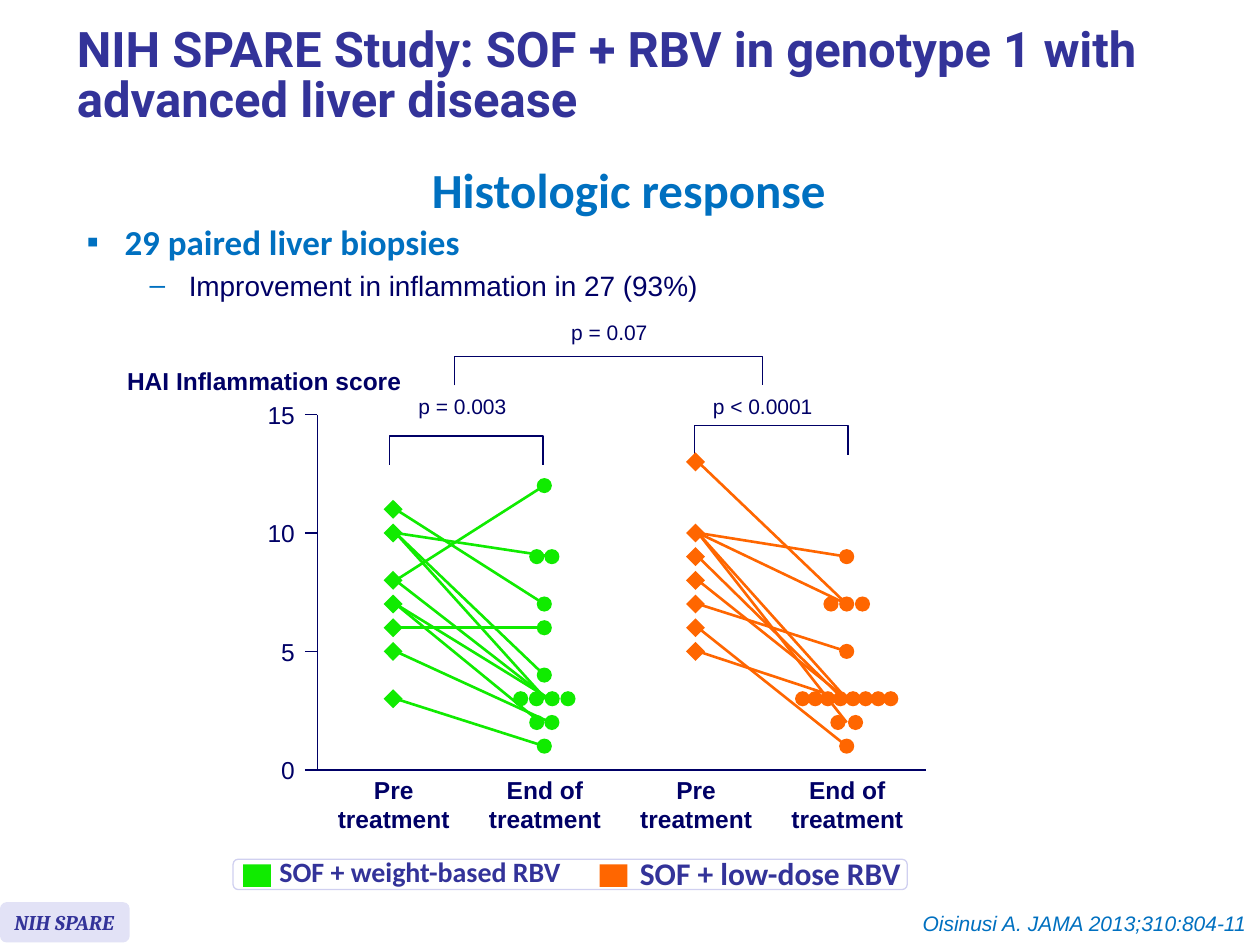
from lxml.etree import SubElement
from pptx import Presentation
from pptx.dml.color import RGBColor
from pptx.enum.shapes import MSO_CONNECTOR, MSO_SHAPE
from pptx.enum.text import MSO_ANCHOR, MSO_AUTO_SIZE, PP_ALIGN
from pptx.oxml.ns import qn
from pptx.util import Inches, Pt

WHITE = RGBColor(0xFF, 0xFF, 0xFF)
INDIGO = RGBColor(0x33, 0x33, 0x99)
NAVY = RGBColor(0x00, 0x00, 0x66)
BLUE = RGBColor(0x00, 0x70, 0xC0)
LAVENDER = RGBColor(0xE2, 0xE2, 0xF6)
PALE = RGBColor(0xD0, 0xD0, 0xF0)
GREEN = RGBColor(0x10, 0xEB, 0x00)
ORANGE = RGBColor(0xFF, 0x66, 0x00)

# Chart grid: four columns and a score scale, in inches
FIRST_COLUMN, COLUMN_STEP = 3.12, 1.2
BASELINE, SCORE_STEP = 6.11, 0.188
AXIS_X, AXIS_END, TICK = 2.52, 7.35, 0.1
DIAMOND, DOT = 0.15, 0.12

# Each group: colour, first column, (pre, end, shift of line end),
# and end-of-treatment dots as score: (count, gap)
GROUPS = [
    (GREEN, 0,
     [(8, 12, 0), (11, 7, 0), (10, 9, 0.06), (10, 4, 0), (10, 3, 0.01),
      (8, 3, 0.03), (7, 3, 0.04), (7, 2, -0.03), (5, 2, 0.05), (3, 1, 0),
      (6, 6, 0)],
     {12: (1, 0), 9: (2, 0.12), 7: (1, 0), 6: (1, 0), 4: (1, 0),
      3: (4, 0.125), 2: (2, 0.12), 1: (1, 0)}),
    (ORANGE, 2,
     [(13, 7, 0), (10, 9, 0), (10, 7, 0), (10, 2, 0), (5, 3, -0.04),
      (6, 1, 0), (10, 3, 0), (9, 3, -0.03), (8, 3, 0), (7, 5, 0)],
     {9: (1, 0), 7: (3, 0.125), 5: (1, 0), 3: (8, 0.1), 2: (2, 0.14),
      1: (1, 0)}),
]


def column_x(column):
    return FIRST_COLUMN + column * COLUMN_STEP


def score_y(score):
    return BASELINE - score * SCORE_STEP


def style_para(para, size, colour, font="Arial", bold=False, italic=False):
    for span in para.runs:
        span.font.name, span.font.size = font, Pt(size)
        span.font.bold, span.font.italic = bold, italic
        span.font.color.rgb = colour


def add_shape(page, kind, place, fill=None, line=None):
    shape = page.shapes.add_shape(kind, *map(Inches, place))
    shape.shadow.inherit = False
    if fill is None:
        shape.fill.background()
    else:
        shape.fill.solid()
        shape.fill.fore_color.rgb = fill
    if line is None:
        shape.line.fill.background()
    else:
        shape.line.color.rgb = line
        shape.line.width = Pt(0.75)
    return shape


def add_marker(page, kind, x, y, size, colour):
    add_shape(page, kind, (x - size / 2, y - size / 2, size, size), colour)


def add_line(page, start, end, colour=NAVY, width=1):
    line = page.shapes.add_connector(
        MSO_CONNECTOR.STRAIGHT, *map(Inches, (*start, *end)))
    line.line.color.rgb = colour
    line.line.width = Pt(width)
    SubElement(line._element.spPr, qn("a:effectLst"))


def add_text(page, text, place, size, colour=NAVY, align=PP_ALIGN.LEFT,
             margins=True, **style):
    box = page.shapes.add_textbox(*map(Inches, place))
    frame = box.text_frame
    frame.word_wrap = False
    if not margins:
        frame.margin_left = frame.margin_right = 0
        frame.margin_top = frame.margin_bottom = 0
        frame.vertical_anchor = MSO_ANCHOR.MIDDLE
    para = frame.paragraphs[0]
    para.text = text
    para.alignment = align
    style_para(para, size, colour, **style)
    return para


def add_bracket(page, centre, top, width, height=0.23):
    # A left bracket turned a quarter, so that it opens downwards
    place = (centre - height / 2, top + height / 2 - width / 2, height, width)
    bracket = add_shape(page, MSO_SHAPE.LEFT_BRACKET, place, line=NAVY)
    bracket.adjustments[0] = 0
    bracket.rotation = 90


def add_bullet(para, mark, indent, hanging):
    props = para._p.get_or_add_pPr()
    props.set("marL", str(Inches(indent)))
    props.set("indent", str(-Inches(hanging)))
    colour = SubElement(props, qn("a:buClr"))
    SubElement(colour, qn("a:srgbClr")).set("val", str(BLUE))
    SubElement(props, qn("a:buFont")).set("typeface", "Arial")
    SubElement(props, qn("a:buChar")).set("char", mark)


def add_headings(page):
    title = page.shapes.title
    title.left, title.top = Inches(0.51), Inches(0.08)
    title.width, title.height = Inches(9.13), Inches(1.07)
    frame = title.text_frame
    frame.text = ("NIH SPARE Study: SOF + RBV in genotype 1 "
                  "with advanced liver disease")
    frame.auto_size = MSO_AUTO_SIZE.NONE
    frame.vertical_anchor = MSO_ANCHOR.MIDDLE
    para = frame.paragraphs[0]
    para.alignment, para.line_spacing = PP_ALIGN.LEFT, 0.85
    style_para(para, 28, INDIGO, "Roboto", bold=True)

    heading = add_text(page, "Histologic response", (3.31, 1.36, 3.36, 0.46),
                       28, BLUE, PP_ALIGN.CENTER, font="Calibri", bold=True)
    heading.line_spacing = Pt(23.6)


def add_findings(page):
    box = page.shapes.add_textbox(*map(Inches, (0.59, 1.7, 9.13, 0.79)))
    frame = box.text_frame
    frame.word_wrap = True
    frame.text = "29 paired liver biopsies\nImprovement in inflammation in 27 (93%)"
    main_point, detail = frame.paragraphs
    detail.level = 1
    detail.space_before = Pt(3.2)
    add_bullet(main_point, "▪", 0.3, 0.3)
    add_bullet(detail, "–", 0.81, 0.31)
    style_para(main_point, 20, BLUE, "Calibri", bold=True)
    style_para(detail, 16, NAVY)


def add_axes(page):
    add_text(page, "HAI Inflammation score", (0.91, 2.86, 2.39, 0.34), 14,
             bold=True)
    add_line(page, (AXIS_X, score_y(15)), (AXIS_X, BASELINE))
    add_line(page, (AXIS_X - TICK, BASELINE), (AXIS_END, BASELINE))
    for score in (0, 5, 10, 15):
        y = score_y(score)
        if score:
            add_line(page, (AXIS_X - TICK, y), (AXIS_X, y))
        width = 0.11 * len(str(score))
        add_text(page, str(score), (2.34 - width, y - 0.12, width, 0.24), 14,
                 align=PP_ALIGN.RIGHT, margins=False)
    for column in range(4):
        label = ("Pre", "End of")[column % 2] + "\ntreatment"
        add_text(page, label, (column_x(column) - 0.44, 6.15, 0.89, 0.47), 14,
                 align=PP_ALIGN.CENTER, margins=False, bold=True)


def add_comparisons(page):
    # Label, its left, top and width, then bracket centre, top and width
    for text, left, top, width, *bracket in (
            ("p = 0.003", 3.32, 3.12, 0.7, 3.7, 3.46, 1.22),
            ("p < 0.0001", 5.65, 3.12, 0.8, 6.12, 3.38, 1.22),
            ("p = 0.07", 4.53, 2.54, 0.61, 4.83, 2.83, 2.44)):
        add_text(page, text, (left, top, width, 0.2), 12,
                 align=PP_ALIGN.RIGHT, margins=False)
        add_bracket(page, *bracket)


def add_group(page, colour, column, pairs, dots):
    pre_x, end_x = column_x(column), column_x(column + 1)
    for pre, end, shift in pairs:
        add_line(page, (pre_x + 0.02, score_y(pre)),
                 (end_x + shift, score_y(end)), colour, 1.5)
    for score in sorted({pre for pre, _, _ in pairs}):
        add_marker(page, MSO_SHAPE.DIAMOND, pre_x, score_y(score), DIAMOND,
                   colour)
    for score, (count, gap) in dots.items():
        for place in range(count):
            x = end_x + (place - (count - 1) / 2) * gap
            add_marker(page, MSO_SHAPE.OVAL, x, score_y(score), DOT, colour)


def add_legend(page):
    add_shape(page, MSO_SHAPE.ROUNDED_RECTANGLE, (1.85, 6.82, 5.35, 0.24),
              WHITE, PALE)
    for text, colour, swatch, left, width, size in (
            ("SOF + weight-based RBV", GREEN, 1.93, 2.12, 2.47, 16),
            ("SOF + low-dose RBV", ORANGE, 4.76, 4.98, 2.31, 18)):
        add_shape(page, MSO_SHAPE.RECTANGLE, (swatch, 6.86, 0.22, 0.18), colour)
        add_text(page, text, (left, 6.73, width, 0.38), size, INDIGO,
                 font="Calibri", bold=True)


def add_footer(page):
    badge = add_shape(page, MSO_SHAPE.ROUNDED_RECTANGLE,
                      (0, 7.16, 1.03, 0.32), LAVENDER)
    badge.text_frame.text = "NIH SPARE"
    badge.text_frame.word_wrap = False
    style_para(badge.text_frame.paragraphs[0], 12, INDIGO, "Cambria", True, True)
    add_text(page, "Oisinusi A. JAMA 2013;310:804-11", (7.11, 7.18, 2.88, 0.3),
             12, BLUE, PP_ALIGN.RIGHT, italic=True)


def main():
    deck = Presentation()
    deck.slide_width, deck.slide_height = Inches(10), Inches(7.5)
    page = deck.slides.add_slide(deck.slide_layouts[5])
    add_headings(page)
    add_findings(page)
    add_axes(page)
    add_comparisons(page)
    add_legend(page)
    for group in GROUPS:
        add_group(page, *group)
    add_footer(page)
    deck.save("out.pptx")


if __name__ == "__main__":
    main()
